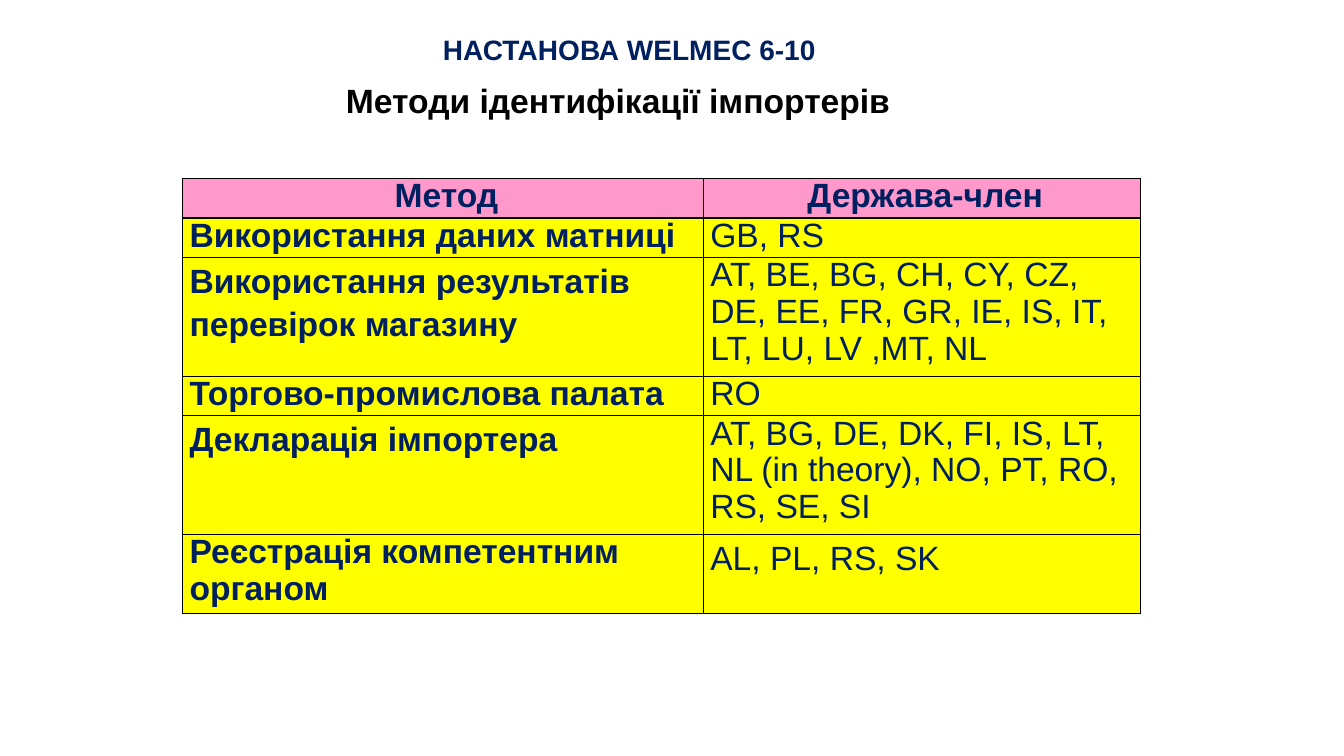
from lxml import etree
from pptx import Presentation
from pptx.dml.color import RGBColor
from pptx.enum import text
from pptx.oxml import ns
from pptx.util import Pt

# Content
NAVY, BLACK, PINK, YELLOW = "002060", "000000", "FF99CC", "FFFF00"
MID, LEFT = text.PP_ALIGN.CENTER, text.PP_ALIGN.LEFT

# text, box, size, colour, alignment, wrap
TITLES = [
    ("НАСТАНОВА WELMEC 6-10", (308, 19.5, 283, 31.5), 20, NAVY, MID, False),
    ("Методи ідентифікації імпортерів", (240, 53.5, 552, 36.5), 24, BLACK, LEFT, True),
]

# method, states, row height, line spacing of each cell
ROWS = [
    ("Метод", "Держава-член", 28.2, 0.98, 0.98),
    ("Використання даних матниці", "GB, RS", 28.2, 0.97, 0.97),
    ("Використання результатів перевірок магазину",
     "AT, BE, BG, CH, CY, CZ, DE, EE, FR, GR, IE, IS, IT, LT, LU, LV ,MT, NL",
     84.8, 1.15, 0.98),
    ("Торгово-промислова палата", "RO", 28.2, 0.97, 0.97),
    ("Декларація імпортера",
     "AT, BG, DE, DK, FI, IS, LT, NL (in theory), NO, PT, RO, RS, SE, SI",
     84.8, 1.15, 0.98),
    ("Реєстрація компетентним органом", "AL, PL, RS, SK", 56.3, 0.98, 1.15),
]
COLS = (372, 312)
TABLE_X, TABLE_Y = 130.4, 127.5


def color(code):
    return RGBColor.from_string(code)


def write(frame, words, size, code, bold, align):
    frame.text = words
    para = frame.paragraphs[0]
    para.alignment = align
    font = para.runs[0].font
    font.name, font.size, font.bold = "Arial", Pt(size), bold
    font.color.rgb = color(code)
    return para


def border(cell):
    props = cell._tc.get_or_add_tcPr()
    for side in ("lnL", "lnR", "lnT", "lnB"):
        line = etree.SubElement(props, ns.qn("a:" + side), w=str(Pt(1)))
        fill = etree.SubElement(line, ns.qn("a:solidFill"))
        etree.SubElement(fill, ns.qn("a:srgbClr"), val=BLACK)


deck = Presentation()
deck.slide_width, deck.slide_height = Pt(960), Pt(540)
slide = deck.slides.add_slide(deck.slide_layouts[6])

# Titles
for words, box, size, code, align, wrap in TITLES:
    frame = slide.shapes.add_textbox(*map(Pt, box)).text_frame
    frame.word_wrap = wrap
    frame.auto_size = text.MSO_AUTO_SIZE.SHAPE_TO_FIT_TEXT
    frame.vertical_anchor = text.MSO_ANCHOR.MIDDLE if wrap else text.MSO_ANCHOR.TOP
    write(frame, words, size, code, True, align)

# Table of methods and states
high = sum(row[2] for row in ROWS)
table = slide.shapes.add_table(
    len(ROWS), len(COLS), Pt(TABLE_X), Pt(TABLE_Y), Pt(sum(COLS)), Pt(high)).table
for col, wide in zip(table.columns, COLS):
    col.width = Pt(wide)
for r, (method, states, tall, *gaps) in enumerate(ROWS):
    table.rows[r].height = Pt(tall)
    head = r == 0
    for c, (words, gap) in enumerate(zip((method, states), gaps)):
        cell = table.cell(r, c)
        cell.margin_left = Pt(5)
        cell.margin_right = cell.margin_top = cell.margin_bottom = 0
        para = write(cell.text_frame, words, 24, NAVY, head or c == 0,
                     MID if head else LEFT)
        para.line_spacing = gap
        border(cell)
        cell.fill.solid()
        cell.fill.fore_color.rgb = color(PINK if head else YELLOW)

deck.save("out.pptx")
